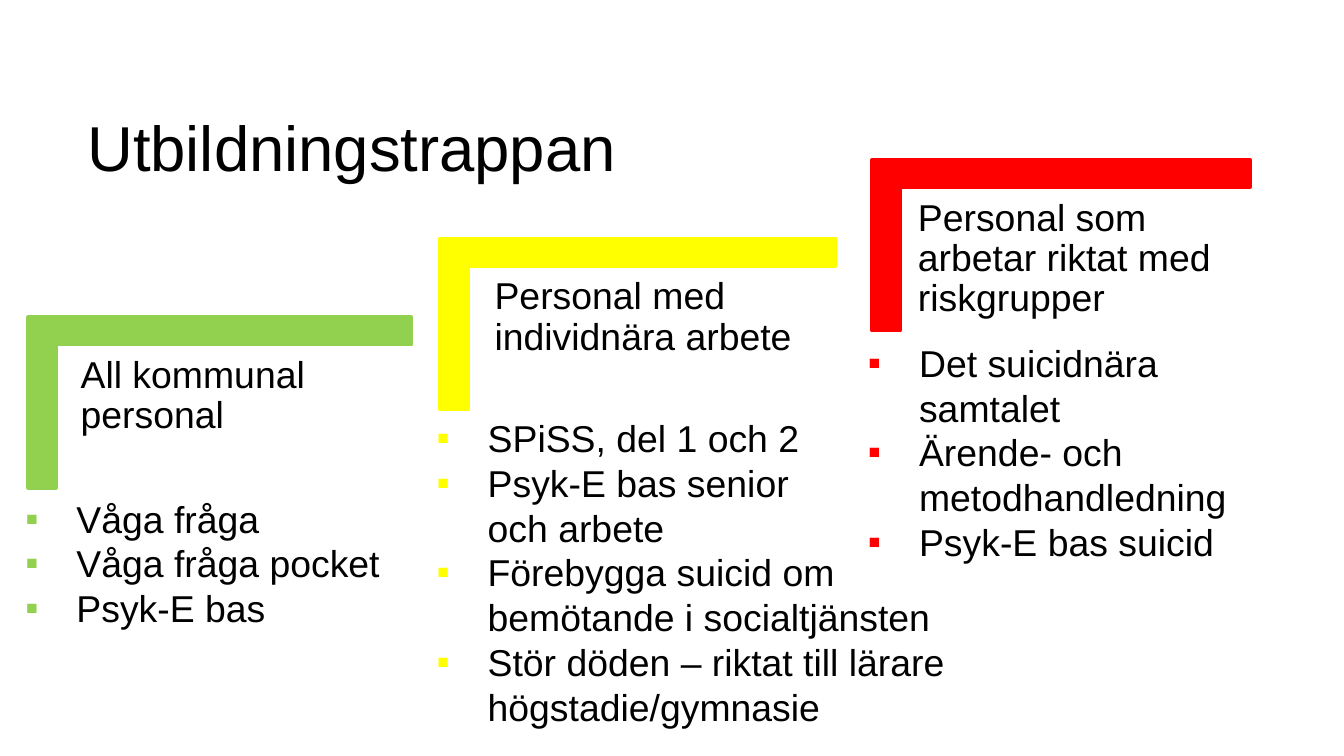
"""Build the training staircase slide with three coloured steps."""
from lxml.etree import SubElement
from pptx import Presentation
from pptx.dml.color import RGBColor
from pptx.enum.shapes import MSO_SHAPE
from pptx.enum.text import MSO_ANCHOR, PP_ALIGN
from pptx.oxml.ns import qn
from pptx.util import Inches, Pt

prs = Presentation()
prs.slide_width, prs.slide_height = Inches(10), Inches(5.625)
COL, ROW = prs.slide_width / 100, prs.slide_height / 100
FIRST_TOP, RISE, CORNER_H = 41.96, 10.4, 22.58


def style(p, size):
    """Set the shared font of a paragraph's runs."""
    for r in p.runs:
        r.font.name, r.font.size = "Arial", Pt(size)
        r.font.color.rgb = RGBColor.from_string("000000")


def add_text(x, y, w, h, inset=None):
    """Add a wrapping text box placed in shares of the slide."""
    tf = s.shapes.add_textbox(int(x * COL), int(y * ROW), int(w * COL), int(h * ROW)).text_frame
    tf.word_wrap = True
    if inset is not None:
        tf.margin_left = tf.margin_right = tf.margin_top = tf.margin_bottom = inset
    return tf


s = prs.slides.add_slide(prs.slide_layouts[5])
title = s.shapes.title
title.left, title.top = int(6.5 * COL), int(11.38 * ROW)
title.width, title.height = int(75.2 * COL), int(12.98 * ROW)
tf = title.text_frame
tf.text = "Utbildningstrappan"
tf.vertical_anchor = MSO_ANCHOR.BOTTOM
tf.margin_left = tf.margin_right = tf.margin_top = tf.margin_bottom = 0
tf.paragraphs[0].alignment = PP_ALIGN.LEFT
style(tf.paragraphs[0], 34)

# colour, corner (x, w), heading (x, w, text), list (x, y, w, h, items)
steps = [
    ("92D050", (2.1, 28.5), (5.2, 20.4, "All kommunal personal"),
     (0.9, 64.71, 29.1, 19.73, ["Våga fråga", "Våga fråga pocket", "Psyk-E bas"])),
    ("FFFF00", (32.75, 29.4), (36, 25.1, "Personal med individnära arbete"),
     (31.5, 54.04, 40.5, 43.73, ["SPiSS, del 1 och 2", "Psyk-E bas senior \voch arbete",
                                 "Förebygga suicid om bemötande i socialtjänsten",
                                 "Stör döden – riktat till lärare högstadie/gymnasie"])),
    ("FF0000", (64.9, 28.1), (67.5, 24.9, "Personal som arbetar riktat med riskgrupper"),
     (63.6, 44.09, 33.5, 31.64, ["Det suicidnära samtalet", "Ärende- och metodhandledning",
                                 "Psyk-E bas suicid"])),
]

for i, (color, (x, w), (head_x, head_w, heading), (*box, items)) in enumerate(steps):
    top = FIRST_TOP - i * RISE
    width, height = w * COL, CORNER_H * ROW
    shift = (width - height) / 2
    sp = s.shapes.add_shape(MSO_SHAPE.CORNER, int(x * COL + shift), int(top * ROW - shift),
                            int(height), int(width))
    sp.rotation = 90
    sp.adjustments[0] = sp.adjustments[1] = 0.161
    sp.shadow.inherit = False
    sp.fill.solid()
    sp.fill.fore_color.rgb = sp.line.color.rgb = RGBColor.from_string(color)
    sp.line.width = Pt(2)

    tf = add_text(head_x, top + 3.73, head_w, 29.69, Inches(0.08))
    tf.text = heading
    tf.paragraphs[0].line_spacing = 0.9
    style(tf.paragraphs[0], 20)

    tf = add_text(*box)
    for n, item in enumerate(items):
        p = tf.add_paragraph() if n else tf.paragraphs[0]
        p.text = item
        pPr = p._p.get_or_add_pPr()
        pPr.set("marL", str(Inches(0.38)))
        pPr.set("indent", str(-Inches(0.38)))
        SubElement(SubElement(pPr, qn("a:buClr")), qn("a:srgbClr"), val=color)
        SubElement(pPr, qn("a:buFont"), typeface="Arial")
        SubElement(pPr, qn("a:buChar"), char="▪")
        style(p, 20)

prs.save("out.pptx")
